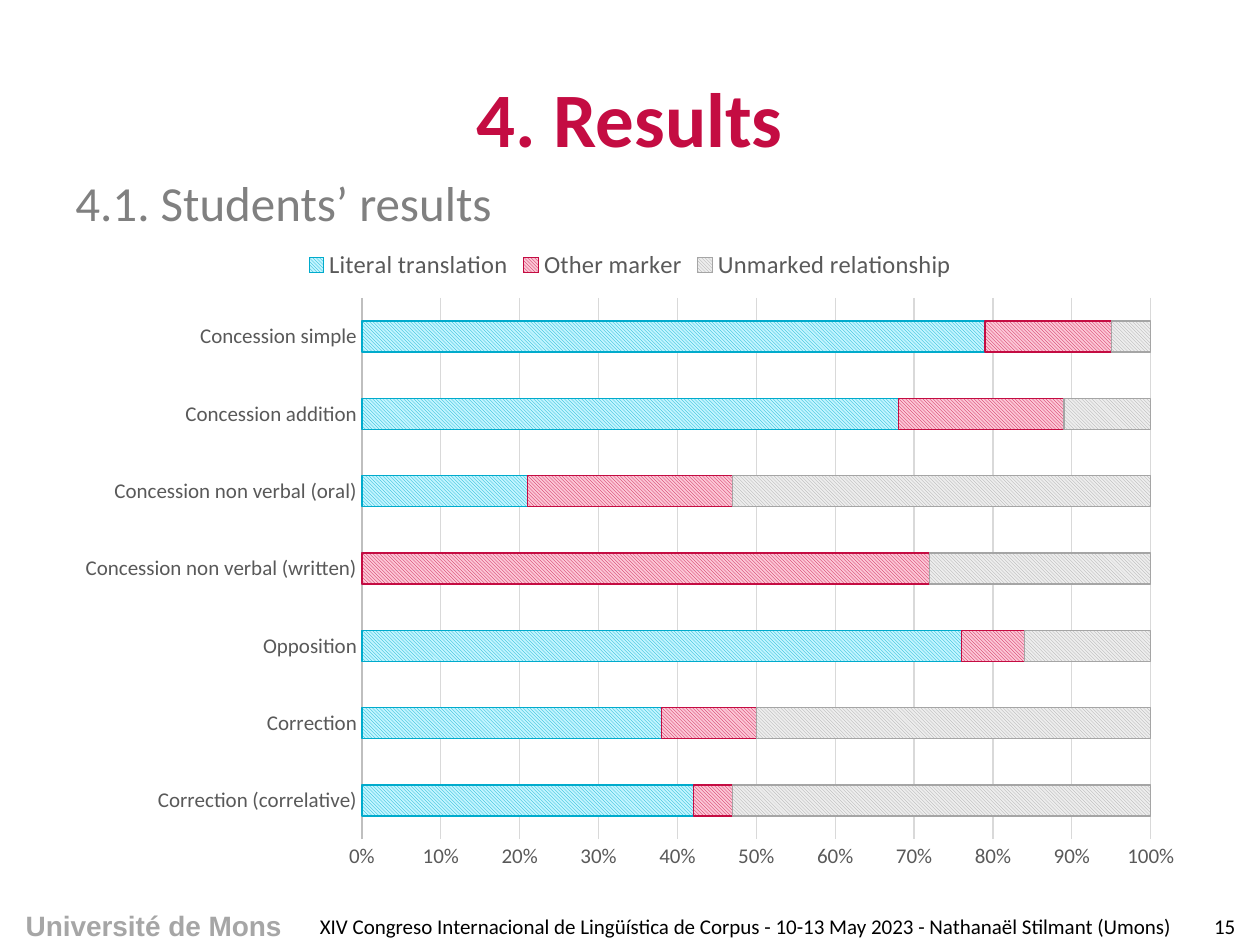
from dataclasses import dataclass

from pptx import Presentation
from pptx.chart.data import CategoryChartData
from pptx.dml.color import RGBColor
from pptx.enum.chart import XL_CHART_TYPE, XL_LEGEND_POSITION, XL_TICK_MARK
from pptx.enum.dml import MSO_PATTERN
from pptx.enum.text import MSO_ANCHOR, PP_ALIGN
from pptx.util import Inches, Pt

WIDTH, HEIGHT = 10, 7.5
MARGIN = 0.5
CONTENT_WIDTH = WIDTH - 2 * MARGIN
CONTENT_BOTTOM = 7
BODY_TOP, CHART_TOP = 1.32, 1.87
FOOTER_TOP, FOOTER_HEIGHT = 7.2, 0.3
FOOTER_LEFT, NUMBER_LEFT = 2.44, 9.44

FONT = "Calibri"
CRIMSON, BLACK, AXIS_TEXT = "C40C42", "000000", "595959"


@dataclass
class Label:
    text: str
    left: float
    top: float
    width: float
    height: float
    size: float
    color: str
    font: str = FONT
    bold: bool = False
    align: PP_ALIGN = PP_ALIGN.LEFT
    anchor: MSO_ANCHOR = MSO_ANCHOR.MIDDLE


@dataclass
class Series:
    name: str
    values: tuple
    line: str
    background: str


LABELS = [
    Label("Université de Mons", 0, 7.16, FOOTER_LEFT, 0.37, 16, "A6A6A6",
          font="Arial", bold=True, align=PP_ALIGN.CENTER, anchor=MSO_ANCHOR.TOP),
    Label("4.1. Students’ results", MARGIN, BODY_TOP, CONTENT_WIDTH,
          CONTENT_BOTTOM - BODY_TOP, 28, "808080",
          align=PP_ALIGN.JUSTIFY, anchor=MSO_ANCHOR.TOP),
    Label("4. Results", MARGIN, 0.3, CONTENT_WIDTH, 1.25, 44, CRIMSON,
          bold=True, align=PP_ALIGN.CENTER),
    Label("15", NUMBER_LEFT, FOOTER_TOP, WIDTH - NUMBER_LEFT, FOOTER_HEIGHT, 12, BLACK,
          align=PP_ALIGN.CENTER),
    Label("XIV Congreso Internacional de Lingüística de Corpus - 10-13 May 2023"
          " - Nathanaël Stilmant (Umons)", FOOTER_LEFT, FOOTER_TOP,
          NUMBER_LEFT - FOOTER_LEFT, FOOTER_HEIGHT, 12, BLACK),
]

CATEGORIES = [
    "Correction (correlative)", "Correction", "Opposition",
    "Concession non verbal (written)", "Concession non verbal (oral)",
    "Concession addition", "Concession simple",
]
SERIES = [
    Series("Literal translation", (42, 38, 76, 0, 21, 68, 79), "00ABCC", "C2F5FF"),
    Series("Other marker", (5, 12, 8, 72, 26, 21, 16), CRIMSON, "FCC6D6"),
    Series("Unmarked relationship", (53, 50, 16, 28, 53, 11, 5), "A5A5A5", "EDEDED"),
]


def rgb(color: str) -> RGBColor:
    return RGBColor.from_string(color)


def style_font(font, size: float, color: str, name: str = FONT, bold: bool = False) -> None:
    font.name, font.size, font.bold = name, Pt(size), bold
    font.color.rgb = rgb(color)


def style_line(line, color: str, width: float) -> None:
    line.color.rgb = rgb(color)
    line.width = Pt(width)


def add_label(page, label: Label) -> None:
    box = page.shapes.add_textbox(Inches(label.left), Inches(label.top),
                                  Inches(label.width), Inches(label.height))
    frame = box.text_frame
    frame.word_wrap = True
    frame.vertical_anchor = label.anchor
    frame.text = label.text
    paragraph = frame.paragraphs[0]
    paragraph.alignment = label.align
    style_font(paragraph.runs[0].font, label.size, label.color, label.font, label.bold)


def style_axes(chart) -> None:
    for axis in (chart.category_axis, chart.value_axis):
        axis.major_tick_mark = axis.minor_tick_mark = XL_TICK_MARK.NONE
        style_font(axis.tick_labels.font, 12, AXIS_TEXT)
    style_line(chart.category_axis.format.line, "BFBFBF", 1.5)

    percent = chart.value_axis
    percent.minimum_scale, percent.maximum_scale, percent.major_unit = 0, 1, 0.1
    percent.tick_labels.number_format = "0%"
    percent.tick_labels.number_format_is_linked = False
    percent.format.line.fill.background()
    percent.has_major_gridlines = True
    style_line(percent.major_gridlines.format.line, "D9D9D9", 0.75)


def add_results_chart(page) -> None:
    data = CategoryChartData()
    data.categories = CATEGORIES
    for series in SERIES:
        data.add_series(series.name, series.values)
    chart = page.shapes.add_chart(
        XL_CHART_TYPE.BAR_STACKED_100, Inches(MARGIN), Inches(CHART_TOP),
        Inches(CONTENT_WIDTH), Inches(CONTENT_BOTTOM - CHART_TOP), data).chart
    style_font(chart.font, 10, BLACK)
    chart.has_title = False
    chart.has_legend = True
    chart.legend.position = XL_LEGEND_POSITION.TOP
    chart.legend.include_in_layout = False
    style_font(chart.legend.font, 14, AXIS_TEXT)
    style_axes(chart)

    plot = chart.plots[0]
    plot.gap_width, plot.overlap, plot.vary_by_categories = 150, 100, False
    for bars, series in zip(plot.series, SERIES):
        fill = bars.format.fill
        fill.patterned()
        fill.pattern = MSO_PATTERN.LIGHT_DOWNWARD_DIAGONAL
        fill.fore_color.rgb = rgb(series.line)
        fill.back_color.rgb = rgb(series.background)
        style_line(bars.format.line, series.line, 0.75)


def main() -> None:
    deck = Presentation()
    deck.slide_width, deck.slide_height = Inches(WIDTH), Inches(HEIGHT)
    page = deck.slides.add_slide(deck.slide_layouts[6])
    for label in LABELS:
        add_label(page, label)
    add_results_chart(page)
    deck.save("out.pptx")


if __name__ == "__main__":
    main()
